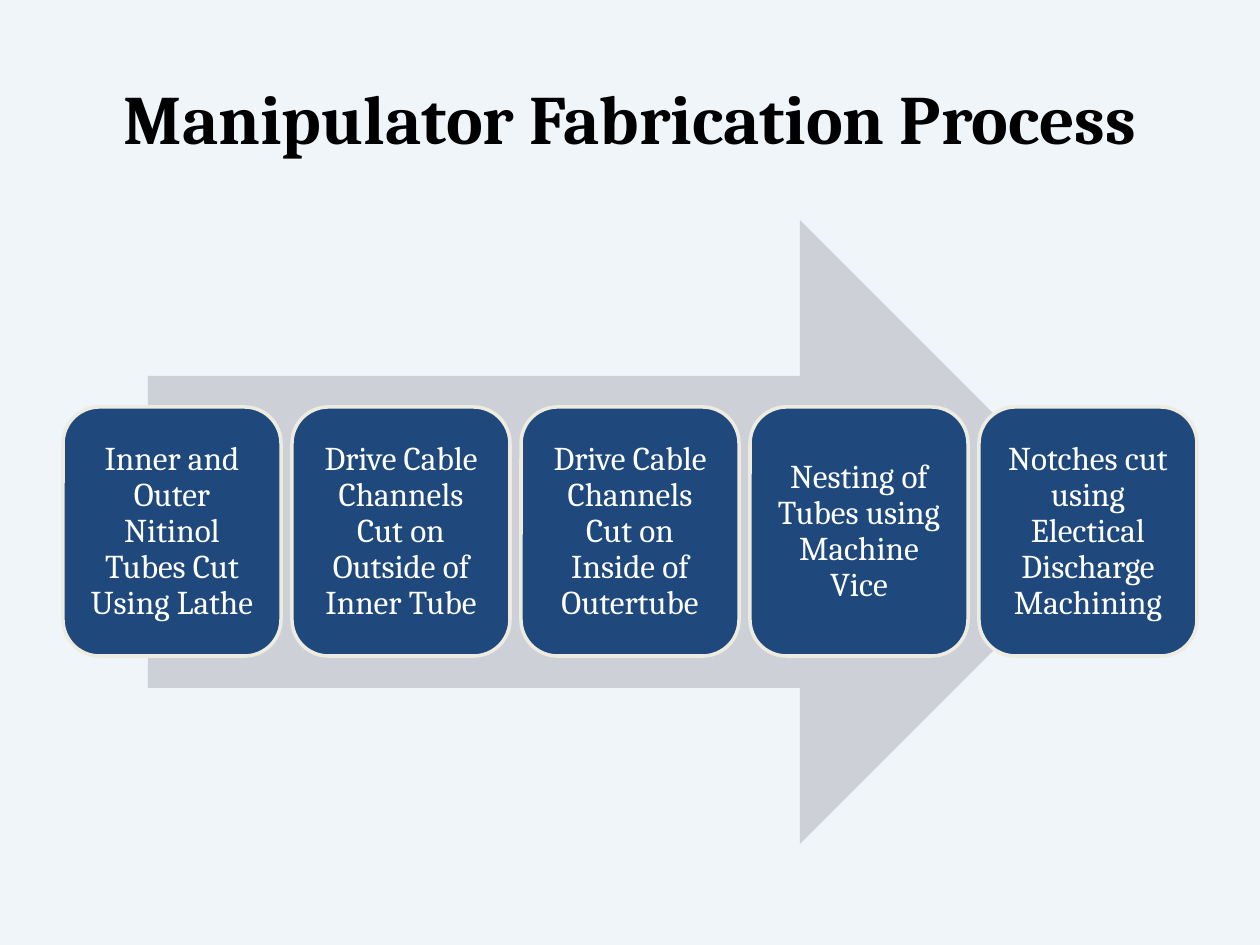
"""Build the manipulator fabrication process slide."""
from dataclasses import dataclass

from pptx import Presentation
from pptx.dml.color import RGBColor
from pptx.enum.shapes import MSO_SHAPE
from pptx.enum.text import MSO_ANCHOR, PP_ALIGN
from pptx.util import Emu, Pt

ROUND_RECT = MSO_SHAPE.ROUNDED_RECTANGLE
RIGHT_ARROW = MSO_SHAPE.RIGHT_ARROW
MIDDLE = MSO_ANCHOR.MIDDLE
CENTER = PP_ALIGN.CENTER

PX_PER_INCH = 126
FONT = "Cambria"
STEP_LEFT, STEP_PITCH = 63, 229
STEP_TOP, STEP_WIDTH, STEP_HEIGHT = 407, 218, 249
STEP_INSET = 10
STEPS = (
    "Inner and Outer Nitinol Tubes Cut Using Lathe",
    "Drive Cable Channels Cut on Outside of Inner Tube",
    "Drive Cable Channels Cut on Inside of Outertube",
    "Nesting of Tubes using Machine Vice",
    "Notches cut using Electical Discharge Machining",
)


@dataclass(frozen=True)
class Box:
    left: int
    top: int
    width: int
    height: int

    def emu(self) -> tuple[Emu, ...]:
        return tuple(px(v) for v in (self.left, self.top, self.width, self.height))


def px(value: int) -> Emu:
    return Emu(round(value * 914400 / PX_PER_INCH))


def rgb(value: str) -> RGBColor:
    return RGBColor.from_string(value)


def set_text(sp, text: str, size: float, color: str, bold: bool = False) -> None:
    tf = sp.text_frame
    tf.text = text
    tf.word_wrap = True
    tf.vertical_anchor = MIDDLE
    p = tf.paragraphs[0]
    p.alignment = CENTER
    font = p.runs[0].font
    font.name = FONT
    font.size = Pt(size)
    font.bold = bold
    font.color.rgb = rgb(color)


def add_title(s, text: str, box: Box) -> None:
    sp = s.shapes.title
    sp.left, sp.top, sp.width, sp.height = box.emu()
    set_text(sp, text, 39.6, "000000", bold=True)


def add_filled(s, kind: MSO_SHAPE, box: Box, fill: str):
    sp = s.shapes.add_shape(kind, *box.emu())
    sp.shadow.inherit = False
    sp.fill.solid()
    sp.fill.fore_color.rgb = rgb(fill)
    sp.line.fill.background()
    return sp


def add_step(s, index: int, text: str) -> None:
    left = STEP_LEFT + index * STEP_PITCH
    sp = add_filled(s, ROUND_RECT, Box(left, STEP_TOP, STEP_WIDTH, STEP_HEIGHT), "1F497D")
    sp.line.color.rgb = rgb("EEECE1")
    sp.line.width = Pt(2)
    set_text(sp, text, 19, "FFFFFF")
    tf = sp.text_frame
    tf.margin_left = tf.margin_right = px(STEP_INSET)
    tf.margin_top = tf.margin_bottom = px(STEP_INSET)
    tf.paragraphs[0].line_spacing = 0.9


def main() -> None:
    prs = Presentation()
    prs.slide_width, prs.slide_height = px(1260), px(945)
    s = prs.slides.add_slide(prs.slide_layouts.get_by_name("Title Only"))
    s.background.fill.solid()
    s.background.fill.fore_color.rgb = rgb("F0F5FA")
    add_title(s, "Manipulator Fabrication Process", Box(63, 38, 1134, 158))
    add_filled(s, RIGHT_ARROW, Box(148, 220, 964, 624), "CDD0D7")
    for index, text in enumerate(STEPS):
        add_step(s, index, text)
    prs.save("out.pptx")


if __name__ == "__main__":
    main()
